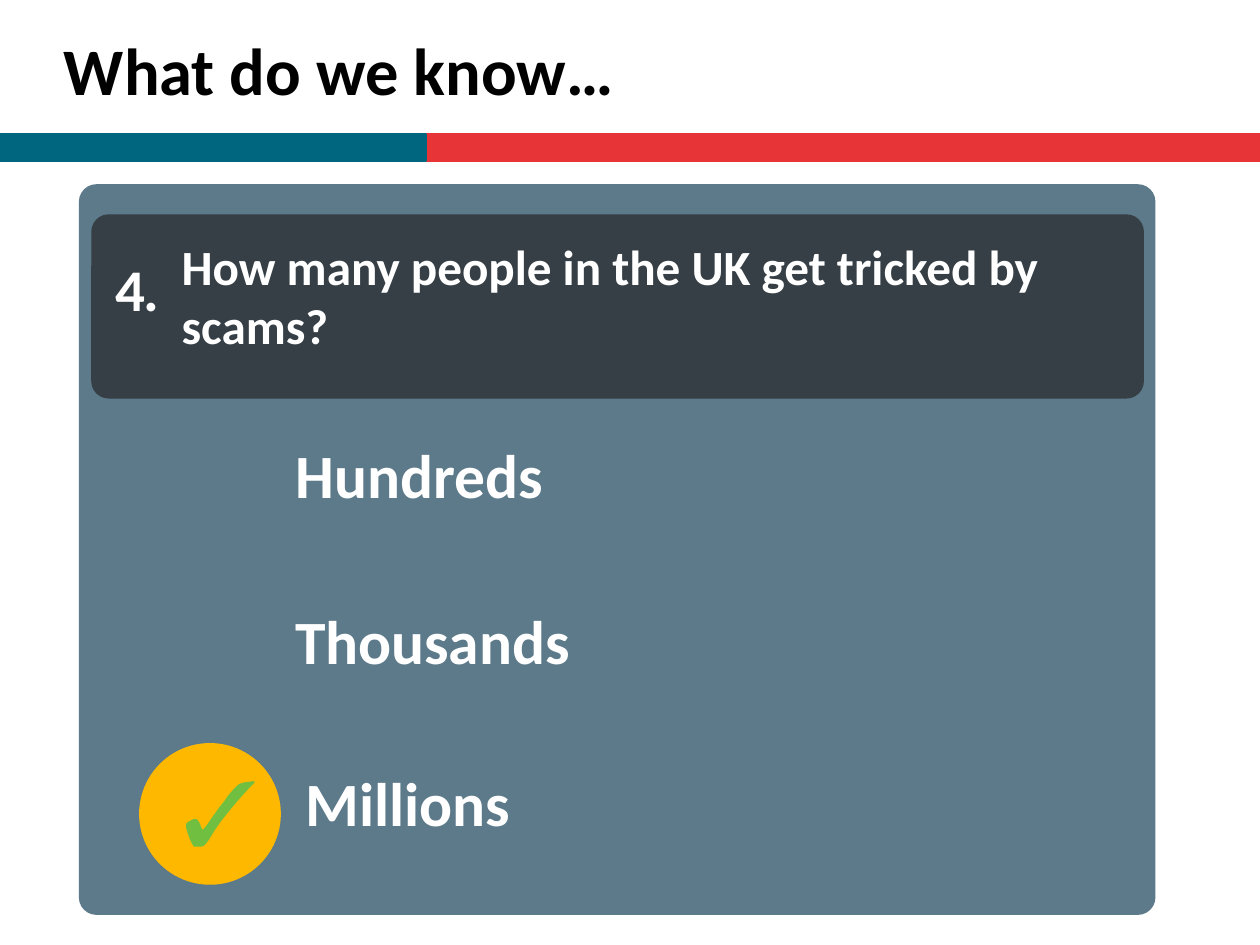
from pptx import Presentation
from pptx.dml.color import RGBColor
from pptx.enum.shapes import MSO_SHAPE
from pptx.enum.text import MSO_ANCHOR, PP_ALIGN
from pptx.util import Inches, Pt

COLORS = {
    "panel": "5D7A8A",
    "question": "363F45",
    "badge": "FFB800",
    "tick": "70BF41",
    "red": "E73437",
    "teal": "006680",
    "black": "000000",
    "white": "FFFFFF",
}
FONT = "Calibri"
SLIDE_WIDTH = 14.22
SLIDE_HEIGHT = 10.67

ANSWERS = [
    ("Hundreds", 3.28, 4.88),
    ("Thousands", 3.27, 6.75),
    ("Millions", 3.39, 8.58),
]

TICK_OUTLINE = [
    (2.87, 8.84), (2.81, 8.9), (2.72, 9), (2.65, 9.08), (2.56, 9.19),
    (2.49, 9.28), (2.42, 9.38), (2.36, 9.48), (2.33, 9.52), (2.3, 9.55),
    (2.27, 9.56), (2.23, 9.56), (2.19, 9.56), (2.17, 9.53), (2.15, 9.49),
    (2.13, 9.44), (2.11, 9.38), (2.1, 9.34), (2.1, 9.31), (2.11, 9.29),
    (2.14, 9.27), (2.18, 9.25), (2.22, 9.25), (2.24, 9.27), (2.26, 9.31),
    (2.27, 9.34), (2.28, 9.36), (2.29, 9.37), (2.31, 9.35), (2.34, 9.31),
    (2.38, 9.25), (2.43, 9.18), (2.48, 9.11), (2.53, 9.05), (2.57, 8.99),
    (2.62, 8.93), (2.66, 8.89), (2.69, 8.86), (2.73, 8.84), (2.79, 8.83),
    (2.87, 8.82),
]


def rgb(name):
    return RGBColor.from_string(COLORS[name])


def paint(shape, color, line_width=None):
    shape.shadow.inherit = False
    shape.fill.solid()
    shape.fill.fore_color.rgb = rgb(color)
    if line_width is None:
        shape.line.fill.background()
    else:
        shape.line.color.rgb = rgb(color)
        shape.line.width = Pt(line_width)


def add_block(slide, kind, box, color, corner=None, line_width=None):
    shape = slide.shapes.add_shape(kind, *map(Inches, box))
    if corner is not None:
        shape.adjustments[0] = corner
    paint(shape, color, line_width)


def add_label(slide, text, box, size, color="white", insets=(0.06, 0.06),
              wrap=True, spacing=None):
    frame = slide.shapes.add_textbox(*map(Inches, box)).text_frame
    frame.word_wrap = wrap
    frame.vertical_anchor = MSO_ANCHOR.TOP
    frame.margin_left = frame.margin_right = Inches(insets[0])
    frame.margin_top = frame.margin_bottom = Inches(insets[1])
    paragraph = frame.paragraphs[0]
    paragraph.alignment = PP_ALIGN.LEFT
    run = paragraph.add_run()
    run.text = text
    run.font.name = FONT
    run.font.size = Pt(size)
    run.font.bold = True
    run.font.color.rgb = rgb(color)
    if spacing is not None:
        run._r.get_or_add_rPr().set("spc", str(round(spacing * 100)))


def add_tick(slide):
    points = [(Inches(x), Inches(y)) for x, y in TICK_OUTLINE]
    builder = slide.shapes.build_freeform(*points[0])
    builder.add_line_segments(points[1:], close=True)
    paint(builder.convert_to_shape(), "tick")


def add_question(slide):
    rounded = MSO_SHAPE.ROUNDED_RECTANGLE
    add_block(slide, rounded, (0.89, 2.08, 12.15, 8.25), "panel", corner=0.024)
    add_block(slide, rounded, (1.03, 2.42, 11.88, 2.08), "question", corner=0.094)
    add_label(slide, "How many people in the UK get tricked by scams?",
              (1.99, 2.61, 10.12, 1.47), 40)
    add_label(slide, "4.", (1.21, 2.8, 0.77, 0.94), 48,
              insets=(0.1, 0.05), spacing=-2.1)


def add_answers(slide):
    for text, left, top in ANSWERS:
        add_label(slide, text, (left, top, 8.84, 0.96), 50)
    add_block(slide, MSO_SHAPE.OVAL, (1.57, 8.39, 1.6, 1.6), "badge")
    add_tick(slide)


def add_header(slide):
    add_label(slide, "What do we know…", (0.7, 0.31, 6.32, 0.95), 54,
              color="black", insets=(0.02, 0.02), wrap=False)
    for width, color in ((SLIDE_WIDTH, "red"), (4.81, "teal")):
        add_block(slide, MSO_SHAPE.RECTANGLE, (0, 1.52, width, 0.29), color,
                  line_width=2)


def main():
    presentation = Presentation()
    presentation.slide_width = Inches(SLIDE_WIDTH)
    presentation.slide_height = Inches(SLIDE_HEIGHT)
    slide = presentation.slides.add_slide(presentation.slide_layouts[6])
    add_question(slide)
    add_answers(slide)
    add_header(slide)
    presentation.save("out.pptx")


if __name__ == "__main__":
    main()
